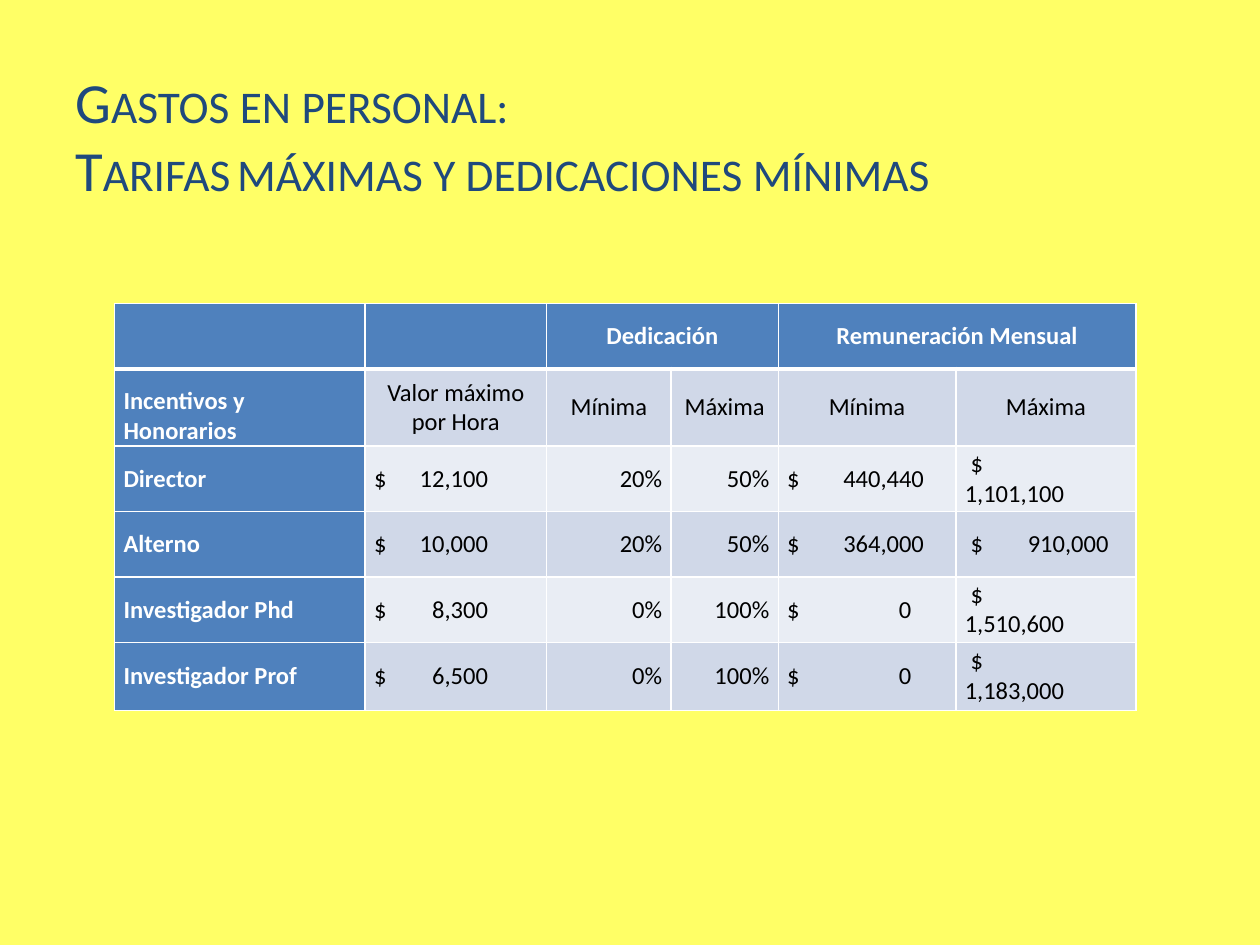
from lxml.etree import SubElement
from pptx import Presentation
from pptx.dml.color import RGBColor
from pptx.enum.text import MSO_ANCHOR as Anchor, PP_ALIGN as Align
from pptx.oxml.ns import qn
from pptx.util import Cm, Pt

WHITE, BLACK, NAVY, BLUE = "FFFFFF", "000000", "1F497D", "4F81BD"
BANDS = ["D0D8E8", "E9EDF4"]
COLUMNS = [5.05, 3.66, 2.51, 2.16, 3.58, 3.63]
ROWS = [1.32, 1.55, 1.32, 1.32, 1.32, 1.37]
HEADINGS = ["Incentivos y Honorarios", "Valor máximo por Hora",
            "Mínima", "Máxima", "Mínima", "Máxima"]
RATES = [
    ["Director", "12,100", "20%", "50%", "440,440", "1,101,100"],
    ["Alterno", "10,000", "20%", "50%", "364,000", "910,000"],
    ["Investigador Phd", "8,300", "0%", "100%", "0", "1,510,600"],
    ["Investigador Prof", "6,500", "0%", "100%", "0", "1,183,000"],
]
AMOUNT_TABS = {1: 2.3, 4: 2.76, 5: 3.2}


def color(value):
    return RGBColor.from_string(value)


def add_span(para, text, size, ink, font="Calibri", bold=False):
    span = para.add_run()
    span.text = text
    span.font.name = font
    span.font.size = Pt(size)
    span.font.bold = bold
    span.font.color.rgb = color(ink)
    return span


def add_small_caps(para, text):
    span = add_span(para, text, 32.4, NAVY)
    span.font._element.set("cap", "small")


def add_title(page):
    box = page.shapes.add_textbox(Cm(1.27), Cm(1.12), Cm(19.84), Cm(3.18))
    frame = box.text_frame
    frame.word_wrap = True
    frame.vertical_anchor = Anchor.MIDDLE
    para = frame.paragraphs[0]
    add_small_caps(para, "Gastos en personal:")
    para.add_line_break()
    add_small_caps(para, "Tarifas")
    add_span(para, " ", 11.7, BLACK, "DejaVu Sans")
    add_small_caps(para, "máximas y dedicaciones mínimas")


def set_borders(cell, top, bottom):
    props = cell._tc.get_or_add_tcPr()
    for side, width in [("L", 1), ("R", 1), ("T", top), ("B", bottom)]:
        line = SubElement(props, qn(f"a:ln{side}"), w=str(Pt(width)))
        fill = SubElement(line, qn("a:solidFill"))
        SubElement(fill, qn("a:srgbClr"), val=WHITE)


def style_cell(cell, row, column):
    set_borders(cell, 3 if row == 1 else 1, 3 if row == 0 else 1)
    is_head = row == 0 or column == 0
    cell.fill.solid()
    cell.fill.fore_color.rgb = color(BLUE if is_head else BANDS[(row - 1) % 2])
    cell.margin_left = cell.margin_right = Cm(0.18)
    cell.margin_top = cell.margin_bottom = 0
    cell.vertical_anchor = Anchor.BOTTOM if (row, column) == (1, 0) else Anchor.MIDDLE


def write_cell(cell, text, align, head=False):
    para = cell.text_frame.paragraphs[0]
    para.alignment = align
    add_span(para, text, 14, WHITE if head else BLACK, bold=head)


def write_amount(cell, amount, column):
    """Dollar sign at the left; long amounts go on a line of their own."""
    para = cell.text_frame.paragraphs[0]
    props = para._p.get_or_add_pPr()
    if column == 5:
        props.set("marL", "0")
        props.set("indent", str(Cm(0.12)))
    if len(amount) > 7:
        add_span(para, "$", 14, BLACK)
        para.add_line_break()
        add_span(para, amount, 14, BLACK)
        return
    end = 2.5 if amount == "0" else AMOUNT_TABS[column]
    tabs = SubElement(props, qn("a:tabLst"))
    SubElement(tabs, qn("a:tab"), pos=str(Cm(end)), algn="r")
    add_span(para, f"$\t{amount}", 14, BLACK)


def add_rate_table(page):
    table = page.shapes.add_table(len(ROWS), len(COLUMNS), Cm(2.31), Cm(6.12),
                                  Cm(sum(COLUMNS)), Cm(sum(ROWS))).table
    for column, width in zip(table.columns, COLUMNS):
        column.width = Cm(width)
    for row, height in zip(table.rows, ROWS):
        row.height = Cm(height)
    for row in range(len(ROWS)):
        for column in range(len(COLUMNS)):
            style_cell(table.cell(row, column), row, column)

    for column, text in [(2, "Dedicación"), (4, "Remuneración Mensual")]:
        group = table.cell(0, column)
        group.merge(table.cell(0, column + 1))
        write_cell(group, text, Align.CENTER, head=True)
    for column, text in enumerate(HEADINGS):
        align = Align.CENTER if column else Align.LEFT
        write_cell(table.cell(1, column), text, align, head=column == 0)
    for row, values in enumerate(RATES, start=2):
        for column, text in enumerate(values):
            cell = table.cell(row, column)
            if column in AMOUNT_TABS:
                write_amount(cell, text, column)
            else:
                align = Align.RIGHT if column else Align.LEFT
                write_cell(cell, text, align, head=column == 0)


def main():
    deck = Presentation()
    deck.slide_width, deck.slide_height = Cm(25.4), Cm(19.05)
    page = deck.slides.add_slide(deck.slide_layouts[6])
    page.background.fill.solid()
    page.background.fill.fore_color.rgb = color("FFFF66")
    add_title(page)
    add_rate_table(page)
    deck.save("out.pptx")


if __name__ == "__main__":
    main()
